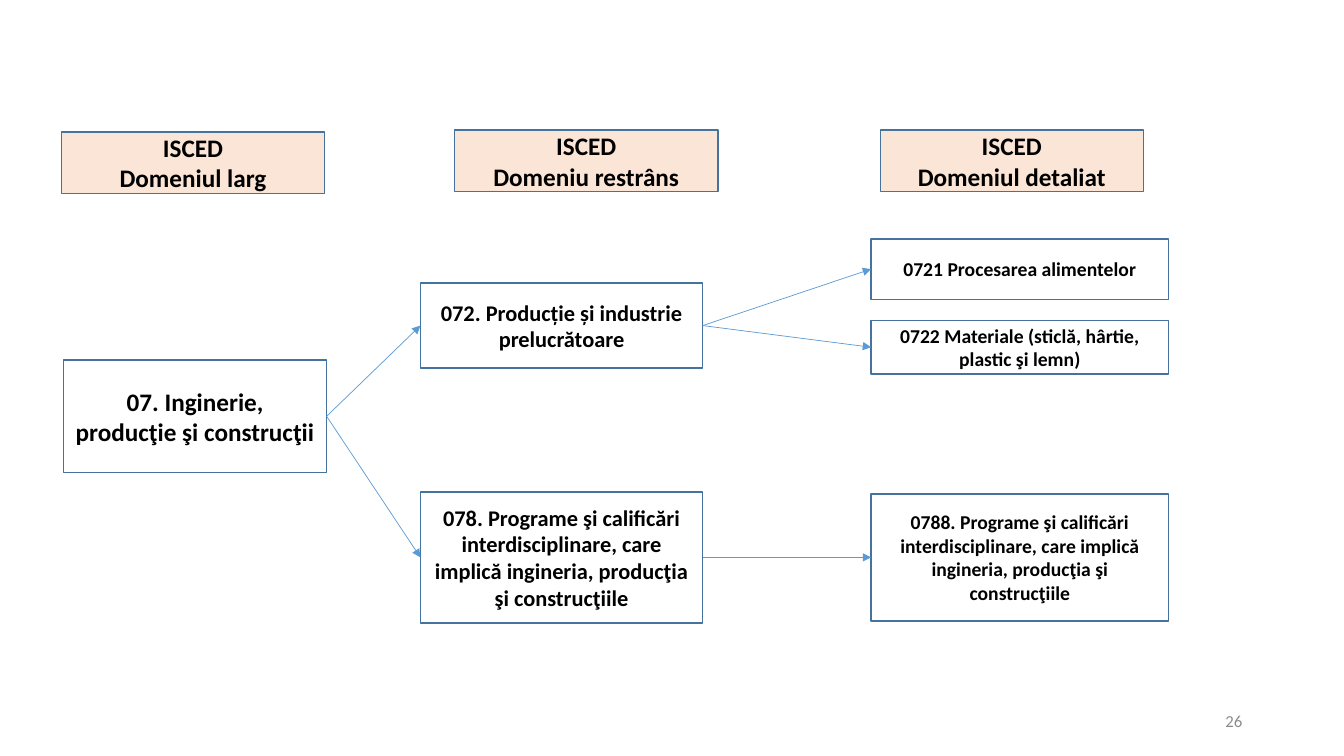
import pptx
import pptx.util
import pptx.dml.color
import pptx.enum.shapes
import pptx.enum.text
import pptx.oxml
import pptx.oxml.ns
from dataclasses import dataclass

Inches = pptx.util.Inches
ALIGN = pptx.enum.text.PP_ALIGN


@dataclass
class Theme:
    font: str = "Calibri"
    text: str = "000000"
    muted: str = "8C8C8C"
    outline: str = "43739E"
    arrow: str = "5B9BD5"
    header_fill: str = "FBE5D6"
    header_size: int = 18
    broad_size: int = 18
    narrow_size: int = 16
    detailed_size: int = 14
    number_size: int = 12


def color(value):
    return pptx.dml.color.RGBColor.from_string(value)


class Diagram:
    """Draws styled elements on one slide."""

    def __init__(self, slide, theme):
        self.slide = slide
        self.theme = theme

    def set_text(self, shape, lines, size, text_color, align, bold):
        frame = shape.text_frame
        frame.word_wrap = True
        frame.vertical_anchor = pptx.enum.text.MSO_ANCHOR.MIDDLE
        frame.text = "\n".join(lines)
        for paragraph in frame.paragraphs:
            paragraph.alignment = align
            paragraph.font.name = self.theme.font
            paragraph.font.size = pptx.util.Pt(size)
            paragraph.font.bold = bold
            paragraph.font.color.rgb = color(text_color)

    def box(self, bounds, lines, size, fill=None):
        shape = self.slide.shapes.add_shape(
            pptx.enum.shapes.MSO_SHAPE.RECTANGLE, *map(Inches, bounds))
        shape.shadow.inherit = False
        if fill:
            shape.fill.solid()
            shape.fill.fore_color.rgb = color(fill)
        else:
            shape.fill.background()
        shape.line.color.rgb = color(self.theme.outline)
        shape.line.width = pptx.util.Pt(1)
        self.set_text(shape, lines, size, self.theme.text, ALIGN.CENTER, True)
        return shape

    def arrow(self, source, target):
        """Joins the right side of one box to the left side of another."""
        connector = self.slide.shapes.add_connector(
            pptx.enum.shapes.MSO_CONNECTOR.STRAIGHT, 0, 0, 0, 0)
        connector.begin_connect(source, 3)
        connector.end_connect(target, 1)
        connector.line.color.rgb = color(self.theme.arrow)
        connector.line.width = pptx.util.Pt(0.5)
        namespace = pptx.oxml.ns.nsdecls("a")
        line = connector.line._get_or_add_ln()
        line.append(pptx.oxml.parse_xml(
            f'<a:tailEnd {namespace} type="triangle"/>'))
        line.addnext(pptx.oxml.parse_xml(f'<a:effectLst {namespace}/>'))

    def page_number(self, bounds, number):
        box = self.slide.shapes.add_textbox(*map(Inches, bounds))
        self.set_text(box, [number], self.theme.number_size,
                      self.theme.muted, ALIGN.RIGHT, False)


def main():
    presentation = pptx.Presentation()
    presentation.slide_width = Inches(13.33)
    presentation.slide_height = Inches(7.5)
    theme = Theme()
    slide = presentation.slides.add_slide(presentation.slide_layouts[6])
    diagram = Diagram(slide, theme)

    # Column headers
    for left, top, title in [(0.61, 1.31, "Domeniul larg"),
                             (4.51, 1.29, "Domeniu restrâns"),
                             (8.73, 1.29, "Domeniul detaliat")]:
        diagram.box((left, top, 2.61, 0.61), ["ISCED", title],
                    theme.header_size, theme.header_fill)

    # Broad field
    broad = diagram.box((0.63, 3.57, 2.61, 1.12),
                        ["07. Inginerie, producţie şi construcţii"],
                        theme.broad_size)

    # Narrow fields, each with its detailed fields: (top, height, text)
    programmes = ("Programe şi calificări interdisciplinare, care implică "
                  "ingineria, producţia şi construcţiile")
    branches = [
        (2.81, 0.84, "072. Producție și industrie prelucrătoare", [
            (2.37, 0.6, "0721 Procesarea alimentelor"),
            (3.18, 0.53, "0722 Materiale (sticlă, hârtie, plastic şi lemn)"),
        ]),
        (4.88, 1.3, f"078. {programmes}", [
            (4.9, 1.26, f"0788. {programmes}"),
        ]),
    ]
    for top, height, text, details in branches:
        narrow = diagram.box((4.17, top, 2.8, height), [text],
                             theme.narrow_size)
        diagram.arrow(broad, narrow)
        for detail_top, detail_height, detail_text in details:
            detailed = diagram.box((8.64, detail_top, 2.95, detail_height),
                                   [detail_text], theme.detailed_size)
            diagram.arrow(narrow, detailed)

    # Page number
    diagram.page_number((9.42, 6.95, 3, 0.4), "26")

    presentation.save("out.pptx")


if __name__ == "__main__":
    main()
